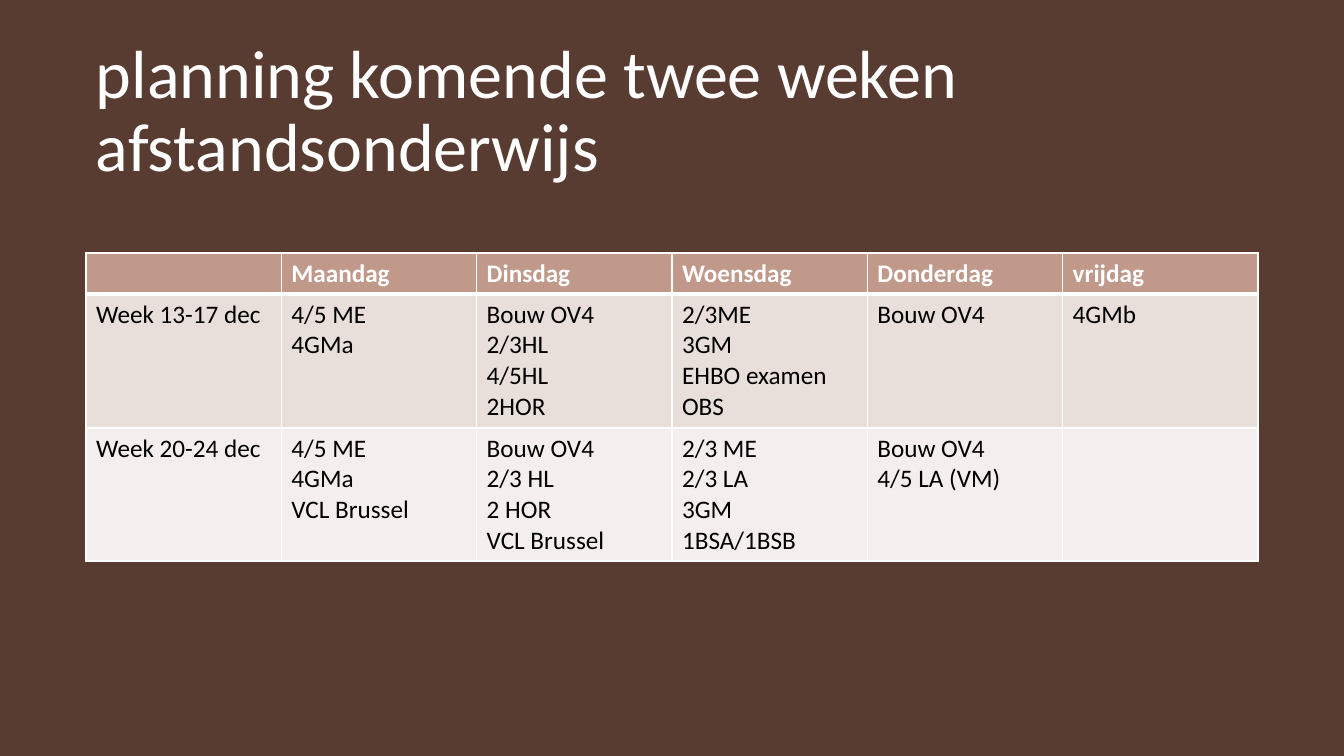
import pptx
import pptx.util
import pptx.dml.color
import pptx.enum.shapes
import pptx.enum.text
import pptx.oxml
import pptx.oxml.ns
import lxml.etree

SCALE = 914400 / 100.8
FONT = "Calibri"
COLORS = {
    "back": "412C24",
    "veil": "5B3E33",
    "head": "C0998B",
    "odd": "E8DEDA",
    "even": "F4EFEE",
    "white": "FFFFFF",
    "black": "000000",
}
DAYS = ["", "Maandag", "Dinsdag", "Woensdag", "Donderdag", "vrijdag"]
WEEKS = [
    ["Week 13-17 dec", "4/5 ME\v4GMa", "Bouw OV4\n2/3HL\n4/5HL\n2HOR",
     "2/3ME\n3GM\vEHBO examen\nOBS", "Bouw OV4", "4GMb"],
    ["Week 20-24 dec", "4/5 ME\v4GMa\nVCL Brussel",
     "Bouw OV4\n2/3 HL\v2 HOR\nVCL Brussel",
     "2/3 ME\n2/3 LA\v3GM\n1BSA/1BSB", "Bouw OV4\n4/5 LA (VM)", ""],
]


def px(count):
    return pptx.util.Emu(round(count * SCALE))


def paint(fill, name):
    fill.solid()
    fill.fore_color.rgb = pptx.dml.color.RGBColor.from_string(COLORS[name])


def write(frame, text, size, color, bold=False):
    for i, part in enumerate(text.split("\n")):
        para = frame.add_paragraph() if i else frame.paragraphs[0]
        para.font.size = pptx.util.Pt(size)
        for j, line in enumerate(part.split("\v")):
            if j:
                para.add_line_break()
            if line:
                run = para.add_run()
                run.text = line
                run.font.name = FONT
                run.font.size = pptx.util.Pt(size)
                run.font.bold = bold
                paint(run.font.fill, color)


def add_veil(slide, width, height):
    kind = pptx.enum.shapes.MSO_SHAPE.RECTANGLE
    veil = slide.shapes.add_shape(kind, 0, 0, px(width), px(height))
    veil.shadow.inherit = False
    veil.line.fill.background()
    paint(veil.fill, "veil")
    tone = veil.fill._xPr.find(".//" + pptx.oxml.ns.qn("a:srgbClr"))
    lxml.etree.SubElement(tone, pptx.oxml.ns.qn("a:alpha"), val="90000")


def add_title(slide, text):
    box = slide.shapes.add_textbox(px(86), px(40), px(1172), px(146))
    frame = box.text_frame
    frame.word_wrap = True
    frame.vertical_anchor = pptx.enum.text.MSO_ANCHOR.MIDDLE
    write(frame, text, 48.6, "white")
    frame.paragraphs[0].line_spacing = 0.9


def edge(cell, base):
    props = cell._tc.get_or_add_tcPr()
    for i, (side, width) in enumerate(zip("LRTB", (1, 1, 1, base))):
        line = pptx.oxml.parse_xml(
            f'<a:ln{side} {pptx.oxml.ns.nsdecls("a")} w="{width * 12700}">'
            f'<a:solidFill><a:srgbClr val="{COLORS["white"]}"/></a:solidFill>'
            f'</a:ln{side}>')
        props.insert(i, line)


def add_plan(slide):
    rows = [DAYS] + WEEKS
    fills = ["head", "odd", "even"]
    highs = [41, 134, 133]
    shape = slide.shapes.add_table(
        len(rows), len(DAYS), px(86), px(253), px(1172), px(sum(highs)))
    table = shape.table
    table.horz_banding = False
    for r, (row, fill, high) in enumerate(zip(rows, fills, highs)):
        table.rows[r].height = px(high)
        top = r == 0
        for c, text in enumerate(row):
            cell = table.cell(r, c)
            paint(cell.fill, fill)
            edge(cell, 3 if top else 1)
            write(cell.text_frame, text, 18, "white" if top else "black", top)
    for c in range(len(DAYS)):
        table.cell(1, c)._tc.tcPr.find(pptx.oxml.ns.qn("a:lnT")).set("w", "38100")


def main():
    deck = pptx.Presentation()
    deck.slide_width, deck.slide_height = px(1344), px(756)
    slide = deck.slides.add_slide(deck.slide_layouts[6])
    paint(slide.background.fill, "back")
    add_veil(slide, 1344, 756)
    add_title(slide, "planning komende twee weken afstandsonderwijs")
    add_plan(slide)
    deck.save("out.pptx")


if __name__ == "__main__":
    main()
